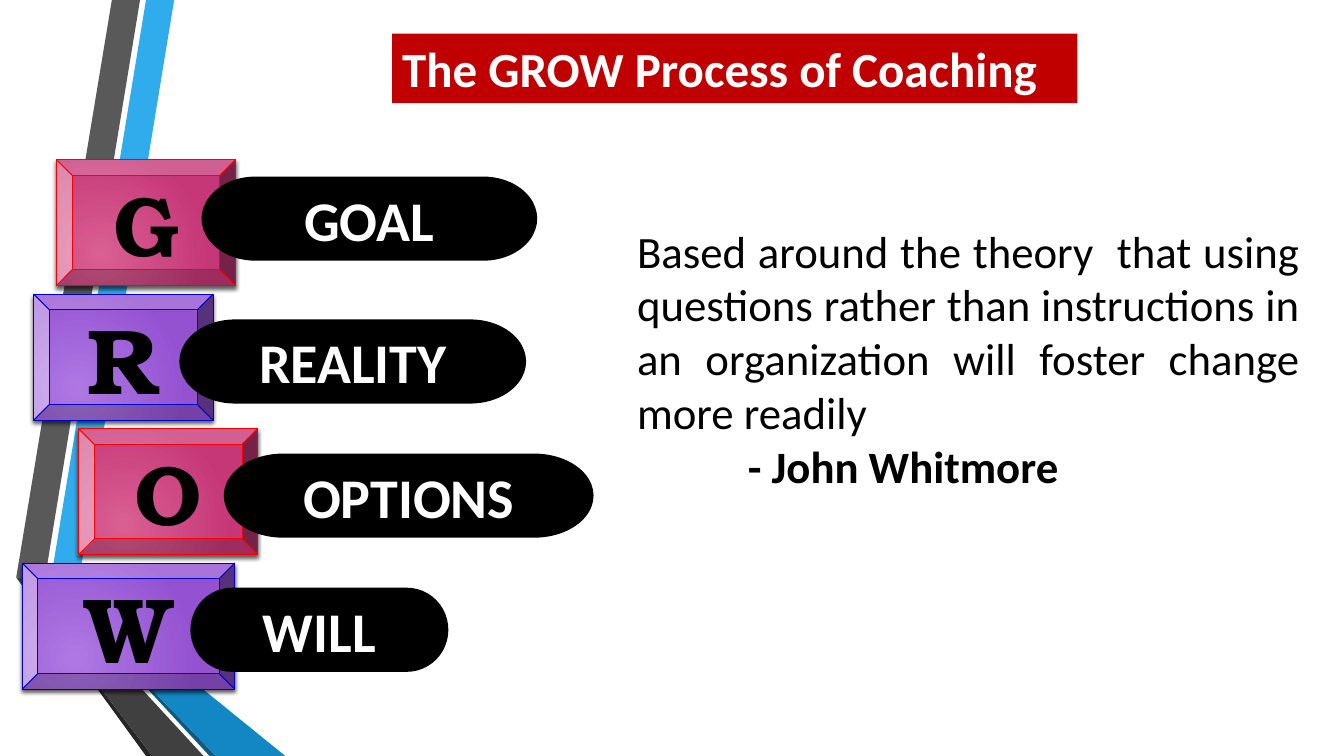
from pptx import Presentation
from pptx.dml.color import RGBColor
from pptx.enum.shapes import MSO_SHAPE as Shape
from pptx.enum.text import MSO_ANCHOR as Anchor, MSO_AUTO_SIZE as AutoSize, PP_ALIGN as Align
from pptx.oxml import parse_xml
from pptx.oxml.ns import nsdecls, qn
from pptx.util import Cm, Pt

PINK = ("D95F92", "C63777", "FF0000")
PURPLE = ("AE78E3", "9452D1", "0000CC")

# Outline points in hundredths of a centimetre
RIBBONS = [
    ("30ACEC", [(127, 1468), (196, 1481), (439, 0), (368, 0)]),
    ("595959", [(353, 0), (282, 0), (41, 1455), (112, 1466)]),
    ("262626", [(41, 1455), (368, 1905), (384, 1905)]),
    ("0C5A82", [(127, 1471), (528, 1905), (544, 1905)]),
    ("1287C3", [(127, 1471), (544, 1905), (719, 1905), (196, 1481), (127, 1468)]),
    ("404040", [(513, 1905), (122, 1481), (109, 1466), (41, 1455), (384, 1905)]),
]

# Letter, size, colours, tile left and width, then word, pill left, top and width
STEPS = [
    ("G", 60, PINK, 1.42, 4.52, "GOAL", 5.08, 4.45, 8.46),
    ("R", 66, PURPLE, 0.85, 4.52, "REALITY", 4.52, 8.05, 8.74),
    ("O", 60, PINK, 1.98, 4.52, "OPTIONS", 5.64, 11.43, 9.32),
    ("W", 66, PURPLE, 0.56, 5.36, "WILL", 4.8, 14.81, 6.5),
]
FIRST_TILE_TOP, TILE_PITCH, TILE_HEIGHT, PILL_HEIGHT = 4.02, 3.39, 3.18, 2.12


def rgb(value):
    return RGBColor.from_string(value)


class GrowSlide:
    text_font = "Calibri"
    letter_font = "TeX Gyre Bonum"

    def __init__(self, presentation):
        self.slide = presentation.slides.add_slide(presentation.slide_layouts[1])
        self.shapes = self.slide.shapes

    def place(self, shape, left, top, width, height):
        shape.left, shape.top, shape.width, shape.height = map(Cm, (left, top, width, height))

    def style(self, paragraph, size, color, bold, align, font=text_font):
        paragraph.alignment = align
        paragraph.font.name = font
        paragraph.font.size = Pt(size)
        paragraph.font.bold = bold
        paragraph.font.color.rgb = rgb(color)

    def fill(self, shape, color):
        shape.fill.solid()
        shape.fill.fore_color.rgb = rgb(color)

    def ribbon(self, color, points):
        builder = self.shapes.build_freeform(*points[0], scale=Cm(0.01))
        builder.add_line_segments(points[1:], close=True)
        shape = builder.convert_to_shape()
        self.fill(shape, color)
        shape.line.fill.background()
        shape.shadow.inherit = False

    def labelled_shape(self, kind, box, text, size, color, font=text_font):
        shape = self.shapes.add_shape(kind, *map(Cm, box))
        shape.shadow.inherit = False
        frame = shape.text_frame
        frame.text = text
        frame.vertical_anchor = Anchor.MIDDLE
        frame.word_wrap = False
        self.style(frame.paragraphs[0], size, color, True, Align.CENTER, font)
        return shape

    def tile(self, box, letter, size, colors):
        """Add a bevelled letter with a radial gradient and a soft shadow."""
        shape = self.labelled_shape(Shape.BEVEL, box, letter, size, "000000", self.letter_font)
        *stops, outline = colors
        shape.fill.gradient()
        for stop, color in zip(shape.fill.gradient_stops, stops):
            stop.color.rgb = rgb(color)
        shape.line.color.rgb = rgb(outline)
        shape.line.width = Pt(0.75)
        properties = shape._element.spPr
        gradient = properties.find(qn("a:gradFill"))
        gradient.replace(gradient.find(qn("a:lin")), parse_xml(
            f'<a:path {nsdecls("a")} path="circle">'
            '<a:fillToRect l="50000" t="100000" r="100000" b="50000"/></a:path>'))
        properties.find(qn("a:effectLst")).append(parse_xml(
            f'<a:outerShdw {nsdecls("a")} blurRad="{Pt(3)}" dist="{Pt(2)}" dir="5400000" '
            'algn="ctr" rotWithShape="0"><a:srgbClr val="000000"><a:alpha val="64000"/>'
            '</a:srgbClr></a:outerShdw>'))

    def pill(self, box, word):
        shape = self.labelled_shape(Shape.FLOWCHART_TERMINATOR, box, word, 40, "FFFFFF")
        self.fill(shape, "000000")
        shape.line.fill.background()

    def title(self, text):
        title = self.shapes.title
        self.place(title, 9.88, 0.85, 17.27, 1.75)
        self.fill(title, "C00000")
        frame = title.text_frame
        frame.text = text
        frame.auto_size = AutoSize.NONE
        frame.word_wrap = False
        frame.vertical_anchor = Anchor.TOP
        self.style(frame.paragraphs[0], 35, "FFFFFF", True, Align.LEFT)

    def quotation(self, text, author):
        body = self.slide.placeholders[1]
        self.place(body, 15.8, 5.5, 17.22, 7.09)
        frame = body.text_frame
        frame.text = f"{text}\n{author}"
        frame.auto_size = AutoSize.NONE
        frame.vertical_anchor = Anchor.TOP
        for paragraph, bold, margin in zip(frame.paragraphs, (False, True), (0, 2.79)):
            properties = paragraph._p.get_or_add_pPr()
            properties.set("marL", str(Cm(margin)))
            properties.set("indent", "0")
            properties.append(parse_xml(f'<a:buNone {nsdecls("a")}/>'))
            paragraph.space_before = Pt(0)
            self.style(paragraph, 32, "000000", bold, Align.JUSTIFY)


def main():
    presentation = Presentation()
    presentation.slide_width, presentation.slide_height = Cm(33.87), Cm(19.05)
    grow = GrowSlide(presentation)
    for color, points in RIBBONS:
        grow.ribbon(color, points)
    for row, step in enumerate(STEPS):
        letter, size, colors, left, width, word, pill_left, pill_top, pill_width = step
        top = FIRST_TILE_TOP + row * TILE_PITCH
        grow.tile((left, top, width, TILE_HEIGHT), letter, size, colors)
        grow.pill((pill_left, pill_top, pill_width, PILL_HEIGHT), word)
    grow.title("The GROW Process of Coaching")
    grow.quotation(
        "Based around the theory  that using questions rather than instructions "
        "in an organization will foster change more readily",
        "- John Whitmore")
    presentation.save("out.pptx")


if __name__ == "__main__":
    main()
